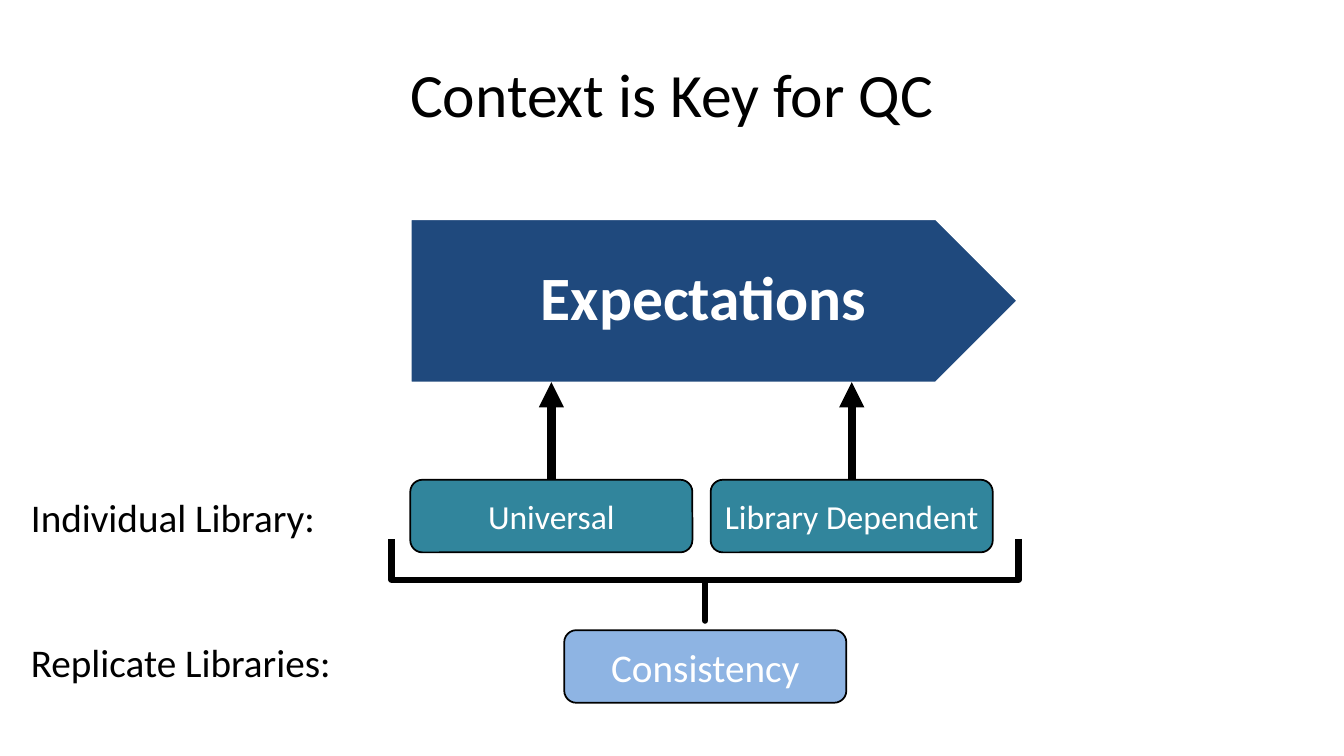
"""Build the slide on the context of quality control."""
import dataclasses

import pptx
import pptx.dml.color
import pptx.enum.shapes
import pptx.enum.text
import pptx.oxml.ns
import pptx.util
from pptx.util import Cm, Pt

COLOURS = {
    "black": "000000",
    "white": "FFFFFF",
    "navy": "1F497D",
    "teal": "31859C",
    "sky": "8EB4E3",
}
Shapes = pptx.enum.shapes.MSO_SHAPE
Alignment = pptx.enum.text.PP_ALIGN
FRAME_FORMAT = {
    "word_wrap": True,
    "auto_size": pptx.enum.text.MSO_AUTO_SIZE.NONE,
    "vertical_anchor": pptx.enum.text.MSO_ANCHOR.MIDDLE,
}
BANNER_MARGINS = {
    "margin_left": Cm(0.66),
    "margin_right": Cm(0.15),
    "margin_top": Cm(0.33),
    "margin_bottom": Cm(0.33),
}
BOX_WIDTH, BOX_HEIGHT = 7.11, 1.83
BOX_TOP, BANNER_BOTTOM = 12.09, 9.63


@dataclasses.dataclass(frozen=True)
class Block:
    """A filled shape with centred white text, measured in centimetres."""

    text: str
    left: float
    top: float
    fill: str
    size: int
    width: float = BOX_WIDTH
    height: float = BOX_HEIGHT
    kind: Shapes = Shapes.ROUNDED_RECTANGLE
    line: str = "black"
    line_width: float = 1.25
    bold: bool = False


@dataclasses.dataclass(frozen=True)
class Label:
    """A row label, measured in centimetres."""

    text: str
    top: float


BANNER = Block("Expectations", 10.34, 5.51, "navy", 44, 15.32, 4.14,
               Shapes.PENTAGON, "white", 2, True)
CRITERIA = [
    Block("Universal", 10.34, BOX_TOP, "teal", 24),
    Block("Library Dependent", 17.91, BOX_TOP, "teal", 24),
]
CONSISTENCY = Block("Consistency", 14.22, 15.88, "sky", 28)
LABELS = [Label("Individual Library:", 12.04), Label("Replicate Libraries:", 15.7)]


def colour(name: str) -> pptx.dml.color.RGBColor:
    """Return the named colour."""
    return pptx.dml.color.RGBColor.from_string(COLOURS[name])


def apply_format(target: object, values: dict) -> None:
    """Set every attribute in values on the target."""
    for name, value in values.items():
        setattr(target, name, value)


def write_text(shape, text: str, size: int, ink: str,
               alignment: Alignment, bold: bool = False) -> None:
    """Write one formatted paragraph into the shape."""
    frame = shape.text_frame
    apply_format(frame, FRAME_FORMAT)
    paragraph = frame.paragraphs[0]
    paragraph.alignment = alignment
    run = paragraph.add_run()
    run.text = text
    apply_format(run.font, {"name": "Calibri", "size": Pt(size), "bold": bold})
    run.font.color.rgb = colour(ink)


def set_line(shape, ink: str, width: float) -> None:
    """Set the colour and width of an outline."""
    shape.line.color.rgb = colour(ink)
    shape.line.width = Pt(width)


def add_block(slide, block: Block):
    """Draw a filled block with its text."""
    shape = slide.shapes.add_shape(
        block.kind, Cm(block.left), Cm(block.top), Cm(block.width), Cm(block.height))
    shape.shadow.inherit = False
    shape.fill.solid()
    shape.fill.fore_color.rgb = colour(block.fill)
    set_line(shape, block.line, block.line_width)
    write_text(shape, block.text, block.size, "white", Alignment.CENTER, block.bold)
    return shape


def add_label(slide, label: Label) -> None:
    """Draw a row label at the left edge."""
    shape = slide.shapes.add_textbox(Cm(0.53), Cm(label.top), Cm(9), Cm(1.95))
    write_text(shape, label.text, 28, "black", Alignment.LEFT)


def add_arrow(slide, block: Block) -> None:
    """Draw an arrow from the top of a block up to the banner."""
    centre = Cm(block.left + block.width / 2)
    arrow = slide.shapes.add_connector(
        pptx.enum.shapes.MSO_CONNECTOR.STRAIGHT,
        centre, Cm(block.top), centre, Cm(BANNER_BOTTOM))
    set_line(arrow, "black", 6)
    line = arrow.line._get_or_add_ln()
    tail = pptx.oxml.parse_xml(
        f'<a:tailEnd {pptx.oxml.ns.nsdecls("a")} type="triangle"/>')
    line.append(tail)
    effects = pptx.oxml.parse_xml(f'<a:effectLst {pptx.oxml.ns.nsdecls("a")}/>')
    arrow._element.spPr.append(effects)


def add_brace(slide) -> None:
    """Draw the square brace that joins the criteria."""
    brace = slide.shapes.add_shape(
        Shapes.RIGHT_BRACE, Cm(16.74), Cm(6.71), Cm(2.06), Cm(15.8))
    brace.rotation = 90
    brace.adjustments[0] = 0
    brace.adjustments[1] = 0.5
    brace.shadow.inherit = False
    brace.fill.background()
    set_line(brace, "black", 4.5)


def main() -> None:
    """Build and save the presentation."""
    presentation = pptx.Presentation()
    apply_format(presentation, {"slide_width": Cm(33.87), "slide_height": Cm(19.05)})
    slide = presentation.slides.add_slide(presentation.slide_layouts[5])
    title = slide.shapes.title
    apply_format(title, {"left": Cm(1.69), "top": Cm(0.76),
                         "width": Cm(30.48), "height": Cm(3.18)})
    write_text(title, "Context is Key for QC", 44, "black", Alignment.CENTER)
    banner = add_block(slide, BANNER)
    apply_format(banner.text_frame, BANNER_MARGINS)
    banner.text_frame.paragraphs[0].line_spacing = 0.9
    for block in CRITERIA:
        add_block(slide, block)
        add_arrow(slide, block)
    add_block(slide, CONSISTENCY)
    add_brace(slide)
    for label in LABELS:
        add_label(slide, label)
    presentation.save("out.pptx")


if __name__ == "__main__":
    main()
